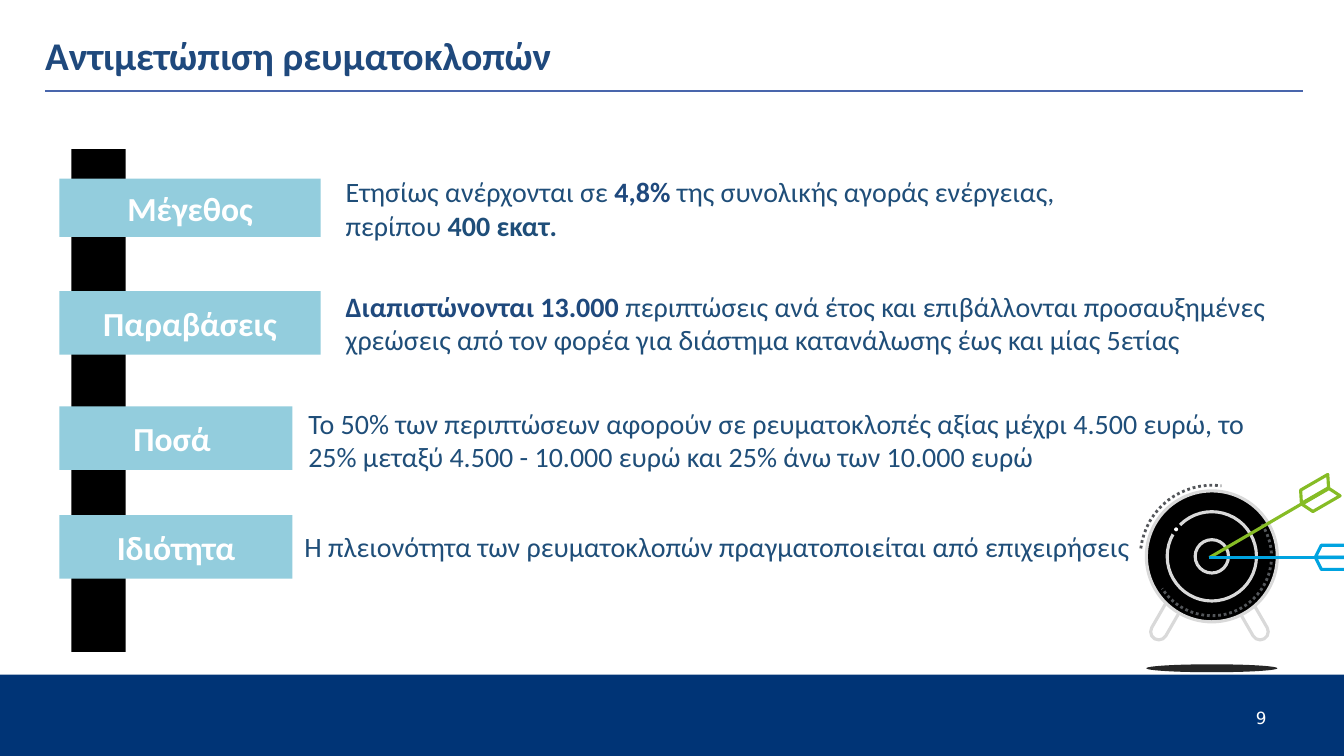
from lxml import etree
from pptx import Presentation
from pptx.dml.color import RGBColor
from pptx.enum.dml import MSO_LINE
from pptx.enum.shapes import MSO_CONNECTOR, MSO_SHAPE
from pptx.enum.text import MSO_ANCHOR, MSO_AUTO_SIZE, PP_ALIGN
from pptx.oxml.ns import qn
from pptx.util import Cm, Pt

RECTANGLE = MSO_SHAPE.RECTANGLE
ELLIPSE = MSO_SHAPE.OVAL
ROUNDED = MSO_SHAPE.ROUNDED_RECTANGLE
FEATHER = MSO_SHAPE.PARALLELOGRAM
STRAIGHT = MSO_CONNECTOR.STRAIGHT
DOTTED = MSO_LINE.ROUND_DOT
MIDDLE = MSO_ANCHOR.MIDDLE
FIT_SHAPE = MSO_AUTO_SIZE.SHAPE_TO_FIT_TEXT
LEFT, CENTER = PP_ALIGN.LEFT, PP_ALIGN.CENTER

NAVY, TITLE_BLUE, TEXT_BLUE = "003476", "1F497D", "1F4E79"
LABEL_BLUE, RULE_BLUE, ARROW_BLUE = "93CDDD", "4966AC", "00A3E0"
GREEN, GREY, DARK_GREY = "86BC25", "D9D9D9", "53565A"
BLACK, WHITE, SHADOW = "000000", "FFFFFF", "262626"


def color(hex_value):
    return RGBColor.from_string(hex_value)


def add_text(paragraph, text, size=20, hex_value=TEXT_BLUE, bold=False, font="Calibri", align=LEFT):
    paragraph.alignment = align
    run = paragraph.add_run()
    run.text = text
    run.font.name = font
    run.font.size = Pt(size)
    run.font.bold = bold
    run.font.color.rgb = color(hex_value)


presentation = Presentation()
presentation.slide_width = Cm(33.87)
presentation.slide_height = Cm(19.05)
slide = presentation.slides.add_slide(presentation.slide_layouts[5])

title = slide.shapes.title
title.left, title.top, title.width, title.height = Cm(1.14), Cm(0.64), Cm(31.6), Cm(1.47)
frame = title.text_frame
frame.margin_left = frame.margin_right = frame.margin_top = frame.margin_bottom = 0
frame.vertical_anchor = MIDDLE
add_text(frame.paragraphs[0], "Αντιμετώπιση ρευματοκλοπών", size=28, hex_value=TITLE_BLUE, bold=True)

target = slide.shapes.add_group_shape().shapes

center_x, center_y = 30.54, 14.02
target_parts = [
    (ELLIPSE, center_x, 16.84, 3.3, 0.2, 0, False, SHADOW, None),
    (ROUNDED, 31.55, 15.56, 0.41, 1.24, 330, False, None, GREY),
    (ROUNDED, 29.41, 15.56, 0.41, 1.24, 30, False, None, GREY),
    (ELLIPSE, center_x, center_y, 3.3, 3.3, 0, False, BLACK, GREY),
    (ELLIPSE, center_x, center_y, 0.84, 0.84, 0, False, None, GREY),
    (ELLIPSE, center_x, center_y, 2.25, 2.25, 0, False, None, GREY),
    (FEATHER, 33.13, 12.32, 0.94, 0.3, 330, False, None, GREEN),
    (FEATHER, 33.29, 12.6, 0.94, 0.3, 330, True, None, GREEN),
    (FEATHER, 33.62, 13.89, 0.94, 0.3, 0, False, None, ARROW_BLUE),
    (FEATHER, 33.62, 14.2, 0.94, 0.3, 0, True, None, ARROW_BLUE),
    (ELLIPSE, 29.64, 13.34, 0.3, 0.3, 0, False, BLACK, None),
    (ELLIPSE, 29.64, 13.34, 0.1, 0.1, 0, False, WHITE, None),
]
for kind, x, y, width, height, rotation, flipped, fill, line in target_parts:
    shape = target.add_shape(kind, Cm(x - width / 2), Cm(y - height / 2), Cm(width), Cm(height))
    shape.shadow.inherit = False
    shape.rotation = rotation
    if kind in (ROUNDED, FEATHER):
        shape.adjustments[0] = 0.5
    if flipped:
        shape._element.spPr.get_or_add_xfrm().set("flipV", "1")
    if fill:
        shape.fill.solid()
        shape.fill.fore_color.rgb = color(fill)
    else:
        shape.fill.background()
    if line:
        shape.line.color.rgb = color(line)
        shape.line.width = Pt(2.25)
    else:
        shape.line.fill.background()

dotted_arcs = [
    [[(28.75, 13.82), (28.88, 12.8), (29.79, 12.12), (30.78, 12.24)]],
    [
        [(31.8, 13.21), (32.26, 13.92), (32.05, 14.83), (31.34, 15.29)],
        [(31.34, 15.29), (30.66, 15.72), (29.72, 15.52), (29.29, 14.83)],
    ],
]
steps = 16
for curves in dotted_arcs:
    points = []
    for curve in curves:
        for step in range(steps + 1):
            t = step / steps
            weights = ((1 - t) ** 3, 3 * t * (1 - t) ** 2, 3 * t ** 2 * (1 - t), t ** 3)
            x = sum(weight * point[0] for weight, point in zip(weights, curve))
            y = sum(weight * point[1] for weight, point in zip(weights, curve))
            points.append((Cm(x), Cm(y)))
    builder = target.build_freeform(*points[0])
    builder.add_line_segments(points[1:], close=False)
    arc = builder.convert_to_shape()
    arc.shadow.inherit = False
    arc.fill.background()
    arc.line.color.rgb = color(DARK_GREY)
    arc.line.width = Pt(2)
    arc.line.dash_style = DOTTED

straight_lines = [
    (slide.shapes, 1.14, 2.29, 32.84, 2.29, RULE_BLUE, 0.96),
    (target, 30.48, 14.05, 33.45, 12.32, GREEN, 2.25),
    (target, 30.48, 14.05, 33.91, 14.05, ARROW_BLUE, 2.25),
]
for shapes, x1, y1, x2, y2, line, width in straight_lines:
    connector = shapes.add_connector(STRAIGHT, Cm(x1), Cm(y1), Cm(x2), Cm(y2))
    connector.line.color.rgb = color(line)
    connector.line.width = Pt(width)
    etree.SubElement(connector._element.spPr, qn("a:effectLst"))

blocks = [
    (0, 17, 33.87, 2.05, NAVY, ""),
    (1.8, 3.76, 1.37, 12.67, BLACK, ""),
    (1.5, 4.5, 6.58, 1.47, LABEL_BLUE, "Μέγεθος"),
    (1.5, 7.34, 6.58, 1.6, LABEL_BLUE, "Παραβάσεις"),
    (1.5, 10.24, 5.87, 1.6, LABEL_BLUE, "Ποσά "),
    (1.5, 12.98, 5.87, 1.6, LABEL_BLUE, "Ιδιότητα"),
]
for x, y, width, height, fill, label in blocks:
    block = slide.shapes.add_shape(RECTANGLE, Cm(x), Cm(y), Cm(width), Cm(height))
    block.shadow.inherit = False
    block.fill.solid()
    block.fill.fore_color.rgb = color(fill)
    block.line.fill.background()
    if label:
        frame = block.text_frame
        frame.margin_left = frame.margin_right = frame.margin_top = frame.margin_bottom = Cm(0.25)
        frame.vertical_anchor = MIDDLE
        add_text(frame.paragraphs[0], label, size=24, hex_value=WHITE, bold=True, align=CENTER)

strong = {"bold": True, "hex_value": TITLE_BLUE}
descriptions = [
    (8.46, 4.27, 23.42, 1.96, [
        [("Ετησίως ανέρχονται σε ", {}), ("4,8% ", strong), ("της συνολικής αγοράς ενέργειας,", {})],
        [("περίπου ", {}), ("400 εκατ.", {"bold": True})],
    ]),
    (8.46, 7.16, 24.74, 1.96, [
        [("Διαπιστώνονται 13.000 ", strong),
         ("περιπτώσεις ανά έτος και επιβάλλονται προσαυξημένες χρεώσεις από τον φορέα "
          "για διάστημα κατανάλωσης έως και μίας 5ετίας", {})],
    ]),
    (7.52, 10.11, 25.48, 1.96, [
        [("Το 50% των περιπτώσεων αφορούν σε ρευματοκλοπές αξίας μέχρι 4.500 ευρώ, "
          "το 25% μεταξύ 4.500 - 10.000 ευρώ και 25% άνω των 10.000 ευρώ", {})],
    ]),
    (7.42, 13.23, 25.48, 1.12, [
        [("Η πλειονότητα των ρευματοκλοπών πραγματοποιείται από επιχειρήσεις", {})],
    ]),
]
for x, y, width, height, paragraphs in descriptions:
    frame = slide.shapes.add_textbox(Cm(x), Cm(y), Cm(width), Cm(height)).text_frame
    frame.word_wrap = True
    frame.auto_size = FIT_SHAPE
    for index, runs in enumerate(paragraphs):
        paragraph = frame.add_paragraph() if index else frame.paragraphs[0]
        for text, text_format in runs:
            add_text(paragraph, text, **text_format)

frame = slide.shapes.add_textbox(Cm(31.55), Cm(17.9), Cm(1.17), Cm(0.36)).text_frame
frame.word_wrap = True
frame.margin_left = Cm(0.1)
frame.margin_right = frame.margin_top = frame.margin_bottom = 0
frame.paragraphs[0].line_spacing = 0.87
add_text(frame.paragraphs[0], "9", size=12, hex_value=WHITE, font="DejaVu Sans")

presentation.save("out.pptx")
